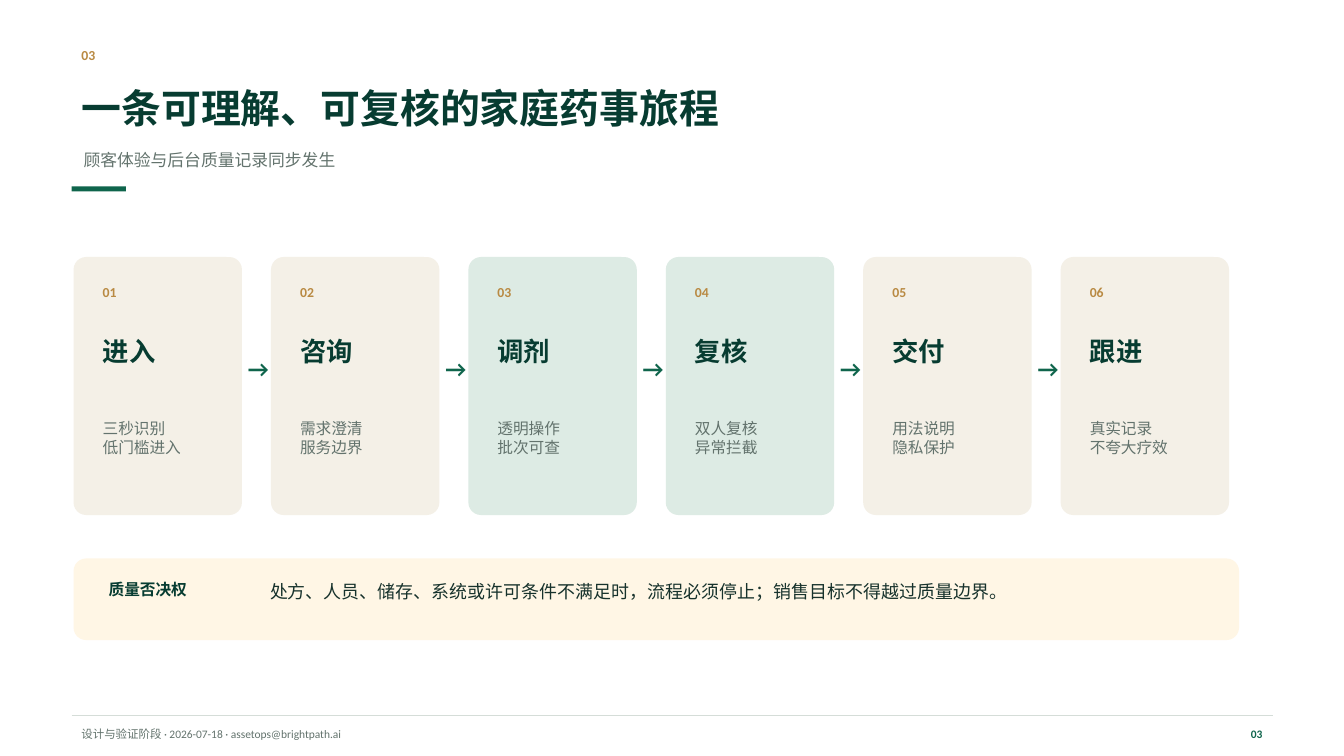
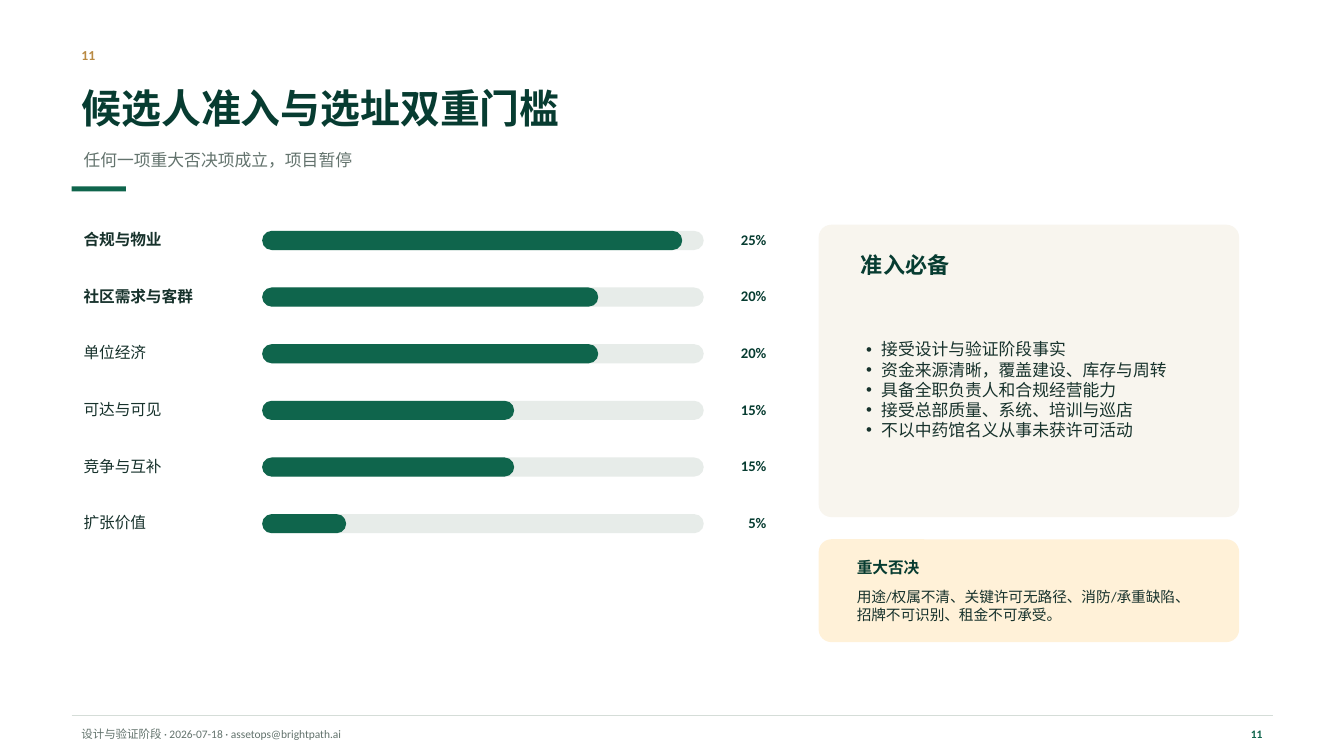
from dataclasses import dataclass

from lxml import etree
from pptx import Presentation
from pptx.dml.color import RGBColor
from pptx.enum.lang import MSO_LANGUAGE_ID
from pptx.enum.shapes import MSO_CONNECTOR, MSO_SHAPE
from pptx.enum.text import MSO_ANCHOR, MSO_AUTO_SIZE, PP_ALIGN
from pptx.oxml.ns import qn
from pptx.util import Inches, Pt

LEFT, CENTER, RIGHT = PP_ALIGN.LEFT, PP_ALIGN.CENTER, PP_ALIGN.RIGHT
MIDDLE = MSO_ANCHOR.MIDDLE
NO_AUTOFIT = MSO_AUTO_SIZE.NONE
RECTANGLE, ROUNDED = MSO_SHAPE.RECTANGLE, MSO_SHAPE.ROUNDED_RECTANGLE
STRAIGHT = MSO_CONNECTOR.STRAIGHT
CHINESE = MSO_LANGUAGE_ID.SIMPLIFIED_CHINESE
TITLE_AND_CONTENT, TITLE_ONLY = 1, 5


@dataclass(frozen=True)
class Theme:
    font: str = "Calibri"
    white: str = "FFFFFF"
    forest: str = "073C31"
    green: str = "0F654C"
    gold: str = "B98A43"
    gray: str = "63736D"
    ink: str = "17322C"
    sand: str = "F4F0E7"
    mint: str = "DDEBE4"
    ivory: str = "F8F5EE"
    cream: str = "FFF6E5"
    amber: str = "FFF1D8"
    track: str = "E7ECE9"
    rule: str = "D5DDD8"
    title_size: float = 28.5
    step_size: float = 18.8
    arrow_size: float = 16.5
    heading_size: float = 15.8
    statement_size: float = 12.8
    body_size: float = 12
    label_size: float = 11.2
    small_size: float = 10.5
    number_size: float = 9.8
    footer_size: float = 8.2
    corner: float = 1 / 8


THEME = Theme()


def add_text(page, area, lines, size, color, bold=False, align=LEFT, holder=None):
    """Write lines, one paragraph each, into holder or into a new text box at area."""
    bounds = [Inches(length) for length in area]
    box = holder or page.shapes.add_textbox(*bounds)
    box.left, box.top, box.width, box.height = bounds
    frame = box.text_frame
    frame.word_wrap = True
    frame.auto_size = NO_AUTOFIT
    frame.vertical_anchor = MIDDLE
    for index, line in enumerate(lines):
        para = frame.add_paragraph() if index else frame.paragraphs[0]
        para.alignment = align
        para.space_before = Pt(0)
        span = para.add_run()
        span.text = line
        span.font.name = THEME.font
        span.font.size = Pt(size)
        span.font.bold = bold
        span.font.color.rgb = RGBColor.from_string(color)
        span.font.language_id = CHINESE
    return box


def add_panel(page, area, color, radius=THEME.corner):
    """Add a filled rectangle with corners of the given radius in inches."""
    kind = ROUNDED if radius else RECTANGLE
    panel = page.shapes.add_shape(kind, *[Inches(length) for length in area])
    if radius:
        panel.adjustments[0] = radius / min(area[2:])
    panel.shadow.inherit = False
    panel.fill.solid()
    panel.fill.fore_color.rgb = RGBColor.from_string(color)
    panel.line.fill.background()


deck = Presentation()
deck.slide_width, deck.slide_height = Inches(13.33), Inches(7.5)

# Shared heading and footer
headings = [
    (TITLE_ONLY, "03", "一条可理解、可复核的家庭药事旅程", "顾客体验与后台质量记录同步发生"),
    (TITLE_AND_CONTENT, "11", "候选人准入与选址双重门槛", "任何一项重大否决项成立，项目暂停"),
]
pages = []
for layout, number, title, subtitle in headings:
    page = deck.slides.add_slide(deck.slide_layouts[layout])
    pages.append(page)
    page.background.fill.solid()
    page.background.fill.fore_color.rgb = RGBColor.from_string(THEME.white)
    add_text(page, (0.71, 0.38, 0.56, 0.33), [number], THEME.number_size, THEME.gold, True)
    add_text(page, (0.71, 0.77, 11.67, 0.6), [title], THEME.title_size, THEME.forest, True,
             holder=page.shapes.title)
    add_text(page, (0.73, 1.4, 11.25, 0.38), [subtitle], THEME.body_size, THEME.gray)
    add_panel(page, (0.71, 1.85, 0.54, 0.05), THEME.green, radius=0)

    footer_rule = page.shapes.add_connector(
        STRAIGHT, Inches(0.71), Inches(7.1), Inches(12.63), Inches(7.1))
    footer_rule.line.width = Pt(0.75)
    footer_rule.line.color.rgb = RGBColor.from_string(THEME.rule)
    etree.SubElement(footer_rule.element.spPr, qn("a:effectLst"))
    add_text(page, (0.71, 7.17, 9.38, 0.23),
             ["设计与验证阶段 · 2026-07-18 · assetops@brightpath.ai"],
             THEME.footer_size, THEME.gray)
    add_text(page, (12.08, 7.17, 0.54, 0.23), [number], THEME.footer_size, THEME.green, True, RIGHT)

journey_page, criteria_page = pages

# Journey: six steps and the quality veto
steps = [
    ("进入", ["三秒识别", "低门槛进入"], THEME.sand),
    ("咨询", ["需求澄清", "服务边界"], THEME.sand),
    ("调剂", ["透明操作", "批次可查"], THEME.mint),
    ("复核", ["双人复核", "异常拦截"], THEME.mint),
    ("交付", ["用法说明", "隐私保护"], THEME.sand),
    ("跟进", ["真实记录", "不夸大疗效"], THEME.sand),
]
first_card, last_card = 0.73, 10.52
card_pitch = (last_card - first_card) / (len(steps) - 1)
for index, (name, details, color) in enumerate(steps):
    card_left = first_card + index * card_pitch
    text_left = card_left + 0.19
    add_panel(journey_page, (card_left, 2.55, 1.67, 2.56), color)
    add_text(journey_page, (text_left, 2.75, 0.62, 0.29), [f"{index + 1:02}"],
             THEME.number_size, THEME.gold, True)
    add_text(journey_page, (text_left, 3.25, 1.29, 0.46), [name],
             THEME.step_size, THEME.forest, True)
    add_text(journey_page, (text_left, 3.98, 1.29, 0.73), details,
             THEME.label_size, THEME.gray)
    if index < len(steps) - 1:
        add_text(journey_page, (card_left + 1.63, 3.44, 0.33, 0.42), ["→"],
                 THEME.arrow_size, THEME.green, True, CENTER)

add_panel(journey_page, (0.73, 5.54, 11.56, 0.81), THEME.cream)
add_text(journey_page, (0.98, 5.71, 1.67, 0.27), ["质量否决权"],
         THEME.label_size, THEME.forest, True)
add_text(journey_page, (2.58, 5.67, 9.27, 0.4),
         ["处方、人员、储存、系统或许可条件不满足时，流程必须停止；销售目标不得越过质量边界。"],
         THEME.statement_size, THEME.ink)

# Criteria: weighted bars
weights = [
    ("合规与物业", 25, True),
    ("社区需求与客群", 20, True),
    ("单位经济", 20, False),
    ("可达与可见", 15, False),
    ("竞争与互补", 15, False),
    ("扩张价值", 5, False),
]
first_row, last_row = 2.23, 5.04
row_pitch = (last_row - first_row) / (len(weights) - 1)
inches_per_percent = 1 / 6
bar_left, bar_height = 2.6, 0.19
for index, (name, percent, bold) in enumerate(weights):
    row_top = first_row + index * row_pitch
    add_text(criteria_page, (0.73, row_top, 1.88, 0.29), [name],
             THEME.label_size, THEME.ink, bold)
    for width, color in ((4.38, THEME.track), (percent * inches_per_percent, THEME.green)):
        add_panel(criteria_page, (bar_left, row_top + 0.06, width, bar_height), color,
                  radius=bar_height / 2)
    add_text(criteria_page, (7.08, row_top, 0.62, 0.29), [f"{percent}%"],
             THEME.small_size, THEME.forest, True, RIGHT)

# Criteria: requirements and vetoes
add_panel(criteria_page, (8.12, 2.23, 4.17, 2.9), THEME.ivory)
add_text(criteria_page, (8.44, 2.46, 1.88, 0.33), ["准入必备"],
         THEME.heading_size, THEME.forest, True)
requirements = [
    "接受设计与验证阶段事实",
    "资金来源清晰，覆盖建设、库存与周转",
    "具备全职负责人和合规经营能力",
    "接受总部质量、系统、培训与巡店",
    "不以中药馆名义从事未获许可活动",
]
body = criteria_page.placeholders[1]
add_text(criteria_page, (8.44, 2.98, 3.44, 1.77), requirements,
         THEME.body_size, THEME.ink, holder=body)
for para in body.text_frame.paragraphs:
    properties = para._p.get_or_add_pPr()
    properties.set("marL", str(Inches(0.2)))
    properties.set("indent", str(Inches(-0.15)))
# The list sits in front of its panel
criteria_page.shapes.element.append(body.element)

add_panel(criteria_page, (8.12, 5.35, 4.17, 1.02), THEME.amber)
add_text(criteria_page, (8.4, 5.48, 1.35, 0.29), ["重大否决"],
         THEME.label_size, THEME.forest, True)
add_text(criteria_page, (8.4, 5.77, 3.54, 0.48),
         ["用途/权属不清、关键许可无路径、消防/承重缺陷、招牌不可识别、租金不可承受。"],
         THEME.small_size, THEME.ink)

deck.save("out.pptx")
